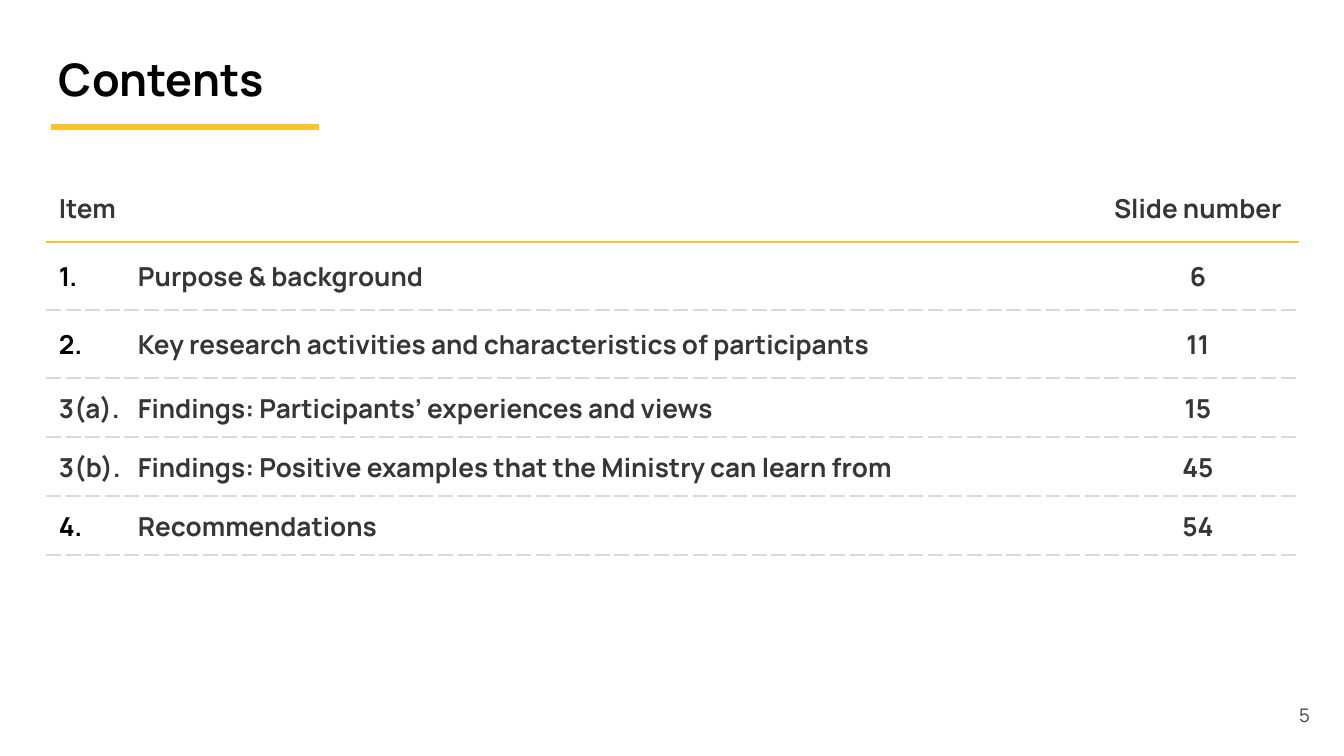
from lxml.etree import SubElement
from pptx import Presentation
from pptx.dml.color import RGBColor
from pptx.enum.shapes import MSO_CONNECTOR as CONN
from pptx.enum.text import MSO_ANCHOR as ANCHOR, PP_ALIGN as ALIGN
from pptx.oxml.ns import qn
from pptx.util import Pt

# Content
TITLE = "Contents"
PAGE = "5"
HEADER = ("Item", "Slide number")
# (automatic number or None, item, slide number)
ITEMS = [
    (1, "Purpose & background", "6"),
    (2, "Key research activities and characteristics of participants", "11"),
    (None, "3(a). \tFindings: Participants’ experiences and views", "15"),
    (None, "3(b). \tFindings: Positive examples that the Ministry can learn from", "45"),
    (4, "Recommendations", "54"),
]

# Layout and style
FONT = "Manrope"
BLACK, DARK, GREY, PALE = "000000", "363636", "434343", "D9D9D9"
GOLD, WHITE = "FAC32F", "FFFFFF"
COL_WIDTHS = (1051, 202)
ROW_HEIGHTS = (67, 68, 68, 59, 59, 59)
INDENT = 79
INSET = 13
NO_STYLE = "{2D5ABB26-0587-4C30-8999-92F81FD0307C}"


def px(n):
    return round(n * 914400 / 134.4)


def rgb(color):
    return RGBColor.from_string(color)


def write(tf, text, size=14, color=DARK, bold=True, align=ALIGN.LEFT):
    p = tf.paragraphs[0]
    p.alignment = align
    r = p.add_run()
    r.text = text
    r.font.name, r.font.size, r.font.bold = FONT, Pt(size), bold
    r.font.color.rgb = rgb(color)
    return p


def set_insets(box):
    box.margin_left = box.margin_right = px(INSET)
    box.margin_top = box.margin_bottom = px(INSET)


def add_text(x, y, w, h, text, anchor=ANCHOR.TOP, **fmt):
    tf = s.shapes.add_textbox(px(x), px(y), px(w), px(h)).text_frame
    tf.word_wrap = True
    tf.vertical_anchor = anchor
    set_insets(tf)
    write(tf, text, **fmt)


def hang(p, number):
    """Hanging indent with a tab stop, and an automatic number if given."""
    pPr = p._p.get_or_add_pPr()
    pPr.set("marL", str(px(INDENT)))
    pPr.set("indent", str(-px(INDENT)))
    if number:
        clr = SubElement(pPr, qn("a:buClr"))
        SubElement(clr, qn("a:srgbClr"), val=BLACK)
        SubElement(pPr, qn("a:buFont"), typeface=FONT)
        SubElement(pPr, qn("a:buAutoNum"), type="arabicPeriod", startAt=str(number))
    else:
        SubElement(pPr, qn("a:buNone"))
    tabs = SubElement(pPr, qn("a:tabLst"))
    SubElement(tabs, qn("a:tab"), pos=str(px(INDENT)), algn="l")


def border(cell, side, color, dash):
    tcPr = cell._tc.get_or_add_tcPr()
    ln = SubElement(tcPr, qn("a:" + side), w=str(Pt(0.75)))
    fill = SubElement(ln, qn("a:solidFill"))
    SubElement(fill, qn("a:srgbClr"), val=color)
    SubElement(ln, qn("a:prstDash"), val=dash)


prs = Presentation()
prs.slide_width, prs.slide_height = px(1344), px(756)
s = prs.slides.add_slide(prs.slide_layouts[6])

# Title and its underline
rule = s.shapes.add_connector(CONN.STRAIGHT, px(51), px(127), px(319), px(127))
rule.line.color.rgb = rgb(GOLD)
rule.line.width = Pt(3)
SubElement(rule._element.spPr, qn("a:effectLst"))
add_text(46, 39, 805, 82, TITLE, size=24, color=BLACK)

# Contents table
frame = s.shapes.add_table(len(ROW_HEIGHTS), len(COL_WIDTHS), px(46), px(175),
                           px(sum(COL_WIDTHS)), px(sum(ROW_HEIGHTS)))
table = frame.table
table.first_row = table.horz_banding = False
table._tbl.tblPr.find(qn("a:tableStyleId")).text = NO_STYLE
for col, w in zip(table.columns, COL_WIDTHS):
    col.width = px(w)
for row, h in zip(table.rows, ROW_HEIGHTS):
    row.height = px(h)

GOLD_RULE, DASHED_RULE = (GOLD, "solid"), (PALE, "dash")
for i, (number, *texts) in enumerate([(None, *HEADER), *ITEMS]):
    for j, text in enumerate(texts):
        cell = table.cell(i, j)
        cell.vertical_anchor = ANCHOR.MIDDLE
        set_insets(cell)
        p = write(cell.text_frame, text, align=ALIGN.CENTER if j else ALIGN.LEFT)
        if i and j == 0:
            hang(p, number)
        if i:
            border(cell, "lnT", *(GOLD_RULE if i == 1 else DASHED_RULE))
        border(cell, "lnB", *(DASHED_RULE if i else GOLD_RULE))
        if i:
            cell.fill.background()
        else:
            cell.fill.solid()
            cell.fill.fore_color.rgb = rgb(WHITE)

# Page number
add_text(1265, 675, 79, 81, PAGE, anchor=ANCHOR.MIDDLE, size=10, color=GREY,
         bold=False, align=ALIGN.CENTER)

prs.save("out.pptx")
